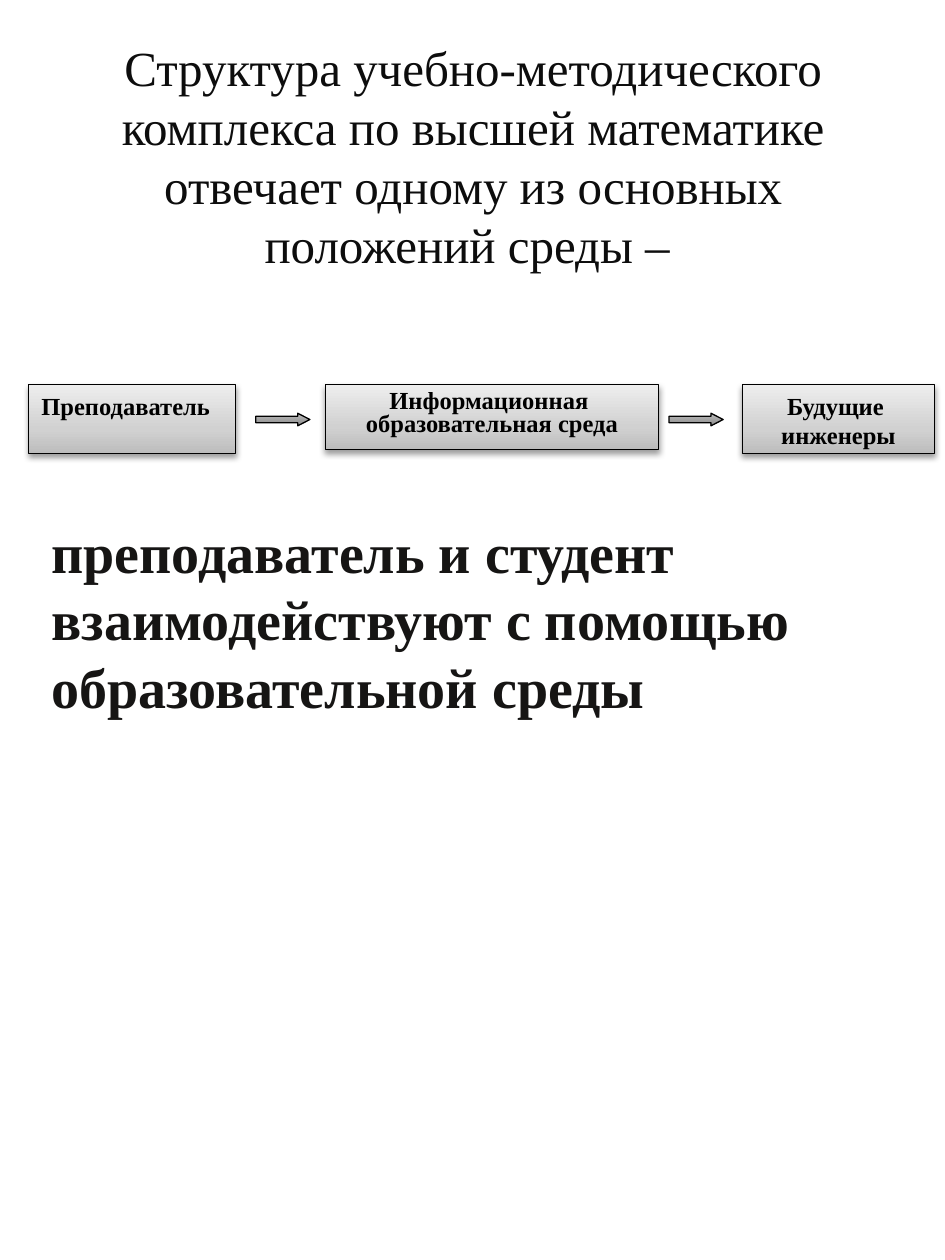
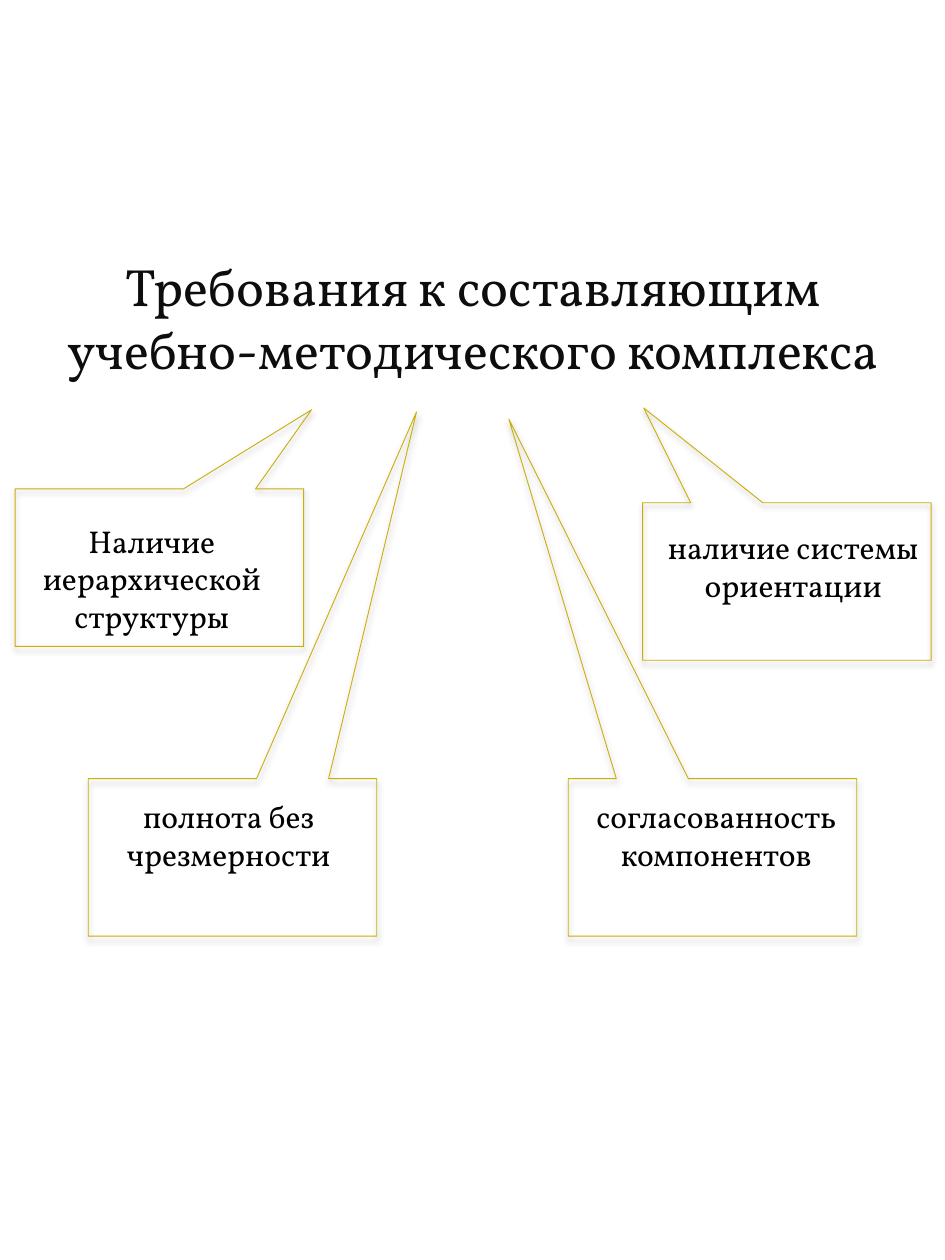
from typing import NamedTuple

from lxml import etree
from pptx import Presentation
from pptx.dml.color import RGBColor
from pptx.enum import shapes, text
from pptx.oxml import ns
from pptx.util import Inches, Pt

SERIF = "Times New Roman"
DISPLAY = "Vollkorn"
BLACK = "000000"
TITLE_INK = "0D0D0D"
TITLE_OUTLINE = "262626"
BODY_INK = "161514"
GOLD = "CCAE05"
BOX_STOPS = [(0, "BDBDBD"), (35, "D1D1D1"), (100, "EEEEEE")]
ARROW_STOPS = [(0, "BFBFBF"), (100, "898989")]
CENTER = text.PP_ALIGN.CENTER
LEFT = text.PP_ALIGN.LEFT


class Area(NamedTuple):
    left: float
    top: float
    width: float
    height: float

    def emu(self) -> list:
        return [Inches(side) for side in self]


class Style(NamedTuple):
    font: str
    size: float
    ink: str
    bold: bool = False
    align: text.PP_ALIGN = CENTER
    spacing: float | None = None


class Stage(NamedTuple):
    area: Area
    label: str
    style: Style


class Requirement(NamedTuple):
    left: float
    top: float
    tip: tuple
    label_area: Area
    label: str


STAGE_STYLE = Style(SERIF, 14, BLACK, bold=True)
REQUIREMENT_STYLE = Style(DISPLAY, 18, BLACK)
STAGES = [
    Stage(Area(2.58, 3.05, 2.65, 0.52), "Информационная \nобразовательная среда",
          STAGE_STYLE._replace(spacing=0.8)),
    Stage(Area(0.23, 3.05, 1.64, 0.55), "Преподаватель", STAGE_STYLE._replace(align=LEFT)),
    Stage(Area(5.89, 3.05, 1.53, 0.55), "Будущие \nинженеры", STAGE_STYLE),
]
ARROW_LEFTS = [2.03, 5.31]
REQUIREMENTS = [
    Requirement(0.12, 3.88, (0.527, -1.002), Area(0.12, 4.09, 2.17, 1.01),
                "Наличие иерархической структуры"),
    Requirement(5.1, 3.99, (-0.496, -1.102), Area(5.09, 4.14, 2.41, 0.71),
                "наличие системы ориентации"),
    Requirement(0.7, 6.18, (0.638, -2.829), Area(0.7, 6.28, 2.23, 0.71),
                "полнота без чрезмерности"),
    Requirement(4.51, 6.18, (-0.706, -2.784), Area(4.57, 6.28, 2.23, 0.71),
                "согласованность компонентов"),
]


def color(value: str) -> RGBColor:
    return RGBColor.from_string(value)


def add_node(parent, tag: str, **attributes):
    return etree.SubElement(parent, ns.qn(tag), {k: str(v) for k, v in attributes.items()})


def write(frame, content: str, style: Style) -> None:
    frame.word_wrap = True
    frame.text = content
    for paragraph in frame.paragraphs:
        paragraph.alignment = style.align
        if style.spacing:
            paragraph.line_spacing = style.spacing
        for run in paragraph.runs:
            run.font.name = style.font
            run.font.size = Pt(style.size)
            run.font.bold = style.bold
            run.font.color.rgb = color(style.ink)


def add_label(slide, area: Area, content: str, style: Style):
    frame = slide.shapes.add_textbox(*area.emu()).text_frame
    write(frame, content, style)
    return frame


def add_title(slide, top: float, content: str, font: str, size: float) -> None:
    frame = add_label(slide, Area(0.38, top, 6.75, 1.67), content, Style(font, size, TITLE_INK))
    frame.vertical_anchor = text.MSO_ANCHOR.MIDDLE
    for paragraph in frame.paragraphs:
        for run in paragraph.runs:
            outline = etree.Element(ns.qn("a:ln"), w=str(Pt(0.15)))
            add_node(add_node(outline, "a:solidFill"), "a:srgbClr", val=TITLE_OUTLINE)
            run.font._element.insert(0, outline)


def add_outlined(parent, kind, area: Area, line: str, weight: float):
    shape = parent.shapes.add_shape(kind, *area.emu())
    shape.shadow.inherit = False
    shape.fill.background()
    shape.line.color.rgb = color(line)
    shape.line.width = Pt(weight)
    return shape


def fill_gradient(shape, stops: list, angle: int) -> None:
    gradient = etree.Element(ns.qn("a:gradFill"), rotWithShape="1")
    stop_list = add_node(gradient, "a:gsLst")
    for position, value in stops:
        add_node(add_node(stop_list, "a:gs", pos=position * 1000), "a:srgbClr", val=value)
    add_node(gradient, "a:lin", ang=angle * 60000, scaled=0)
    properties = shape._element.spPr
    properties.replace(properties.find(ns.qn("a:noFill")), gradient)


def cast_shadow(shape) -> None:
    effects = shape._element.spPr.find(ns.qn("a:effectLst"))
    shadow = add_node(effects, "a:outerShdw", blurRad=Pt(3.5), dist=Pt(2), dir=5400000,
                      rotWithShape=0)
    add_node(add_node(shadow, "a:srgbClr", val=BLACK), "a:alpha", val=38000)


def add_stage(parent, stage: Stage) -> None:
    box = add_outlined(parent, shapes.MSO_SHAPE.RECTANGLE, stage.area, BLACK, 0.5)
    fill_gradient(box, BOX_STOPS, 270)
    cast_shadow(box)
    write(box.text_frame, stage.label, stage.style)
    box.text_frame.vertical_anchor = text.MSO_ANCHOR.TOP


def add_arrow(parent, left: float) -> None:
    arrow = add_outlined(parent, shapes.MSO_SHAPE.RIGHT_ARROW, Area(left, 3.28, 0.43, 0.1),
                         BLACK, 0.75)
    arrow.adjustments[0], arrow.adjustments[1] = 0.5, 0.966
    fill_gradient(arrow, ARROW_STOPS, 90)


def add_requirement(slide, requirement: Requirement) -> None:
    area = Area(requirement.left, requirement.top, 2.29, 1.25)
    callout = add_outlined(slide, shapes.MSO_SHAPE.RECTANGULAR_CALLOUT, area, GOLD, 0.5)
    callout.adjustments[0], callout.adjustments[1] = requirement.tip
    cast_shadow(callout)
    add_label(slide, requirement.label_area, requirement.label, REQUIREMENT_STYLE)


def build_structure(slide) -> None:
    add_title(slide, 0.4, "Структура учебно-методического комплекса по высшей математике "
              "отвечает одному из основных положений среды – ", SERIF, 28)
    add_label(slide, Area(0.31, 4.06, 6.81, 2.42),
              "преподаватель и студент взаимодействуют с помощью образовательной среды",
              Style(SERIF, 32, BODY_INK, bold=True, align=LEFT))
    interaction = slide.shapes.add_group_shape()
    for stage in STAGES:
        add_stage(interaction, stage)
    for left in ARROW_LEFTS:
        add_arrow(interaction, left)


def build_requirements(slide) -> None:
    add_title(slide, 1.68, "Требования к составляющим\vучебно-методического комплекса",
              DISPLAY, 30)
    for requirement in REQUIREMENTS:
        add_requirement(slide, requirement)


def main() -> None:
    deck = Presentation()
    deck.slide_width, deck.slide_height = Inches(7.5), Inches(10)
    for build in (build_structure, build_requirements):
        build(deck.slides.add_slide(deck.slide_layouts[6]))
    deck.save("out.pptx")


if __name__ == "__main__":
    main()
